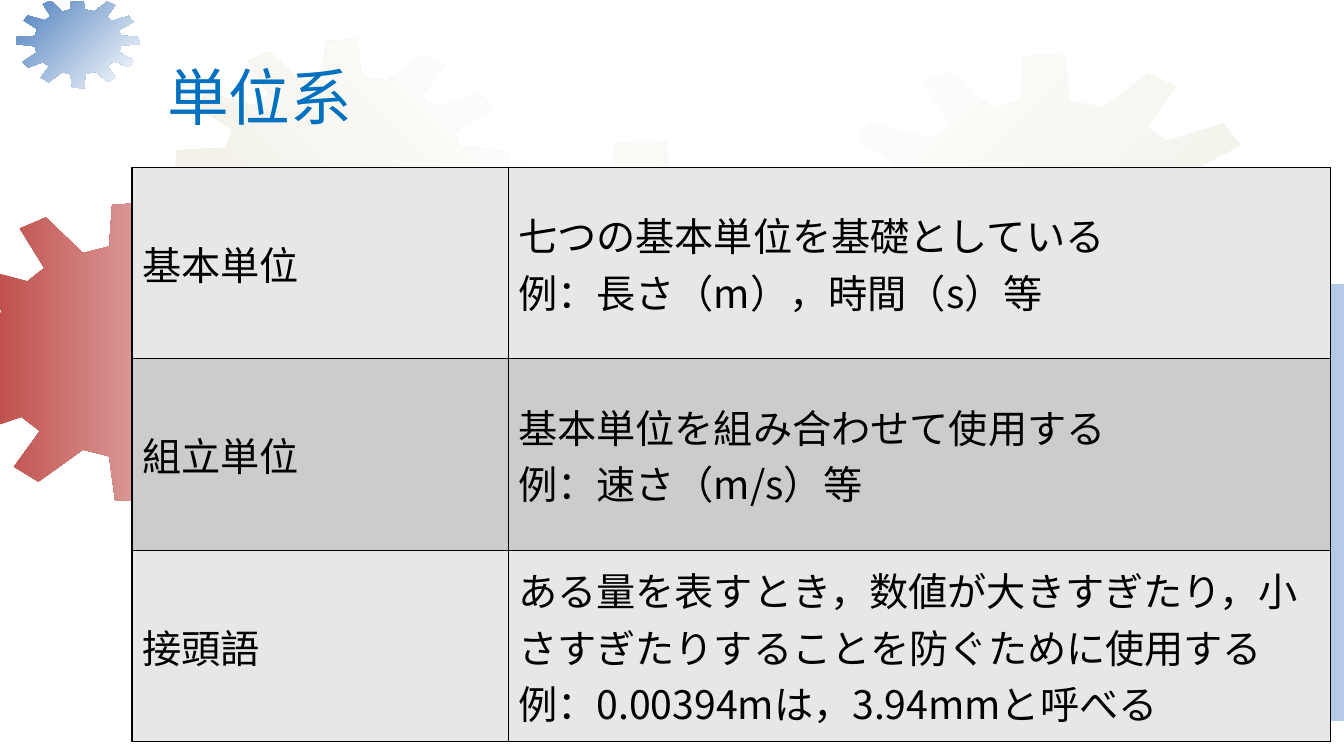
from copy import deepcopy

from lxml.etree import SubElement
from pptx import Presentation
from pptx.dml.color import RGBColor
from pptx.enum.text import MSO_ANCHOR
from pptx.oxml.ns import qn
from pptx.util import Inches, Pt

COLORS = {
    "title": "0070C0", "text": "000000", "border": "000000",
    "light_row": "E7E7E7", "dark_row": "CCCCCC", "white": "FFFFFF",
    "red": "C0504D", "blue": "4F81BD", "ivory": "EEECE1",
    "steel": "99ACC3", "sky": "B5CCE8",
}
JAPANESE_FONT = "Noto Sans CJK JP"

# One gear outline; every gear is this one scaled and moved
GEAR_WIDTH = 5.35
GEAR = [
    (3.40, 0.67), (2.98, 0.59), (2.92, 0), (2.40, 0.03), (2.36, 0.59), (2.01, 0.68),
    (1.51, 0.20), (1.16, 0.35), (1.49, 0.88), (1.26, 1.06), (0.50, 0.85), (0.33, 1.07),
    (0.91, 1.45), (0.81, 1.74), (0.02, 1.78), (0, 2.10), (0.81, 2.19), (0.89, 2.46),
    (0.29, 2.87), (0.50, 3.12), (1.18, 2.88), (1.43, 3.07), (1.08, 3.55), (1.41, 3.75),
    (2.01, 3.32), (2.36, 3.41), (2.44, 4.00), (2.96, 4.01), (3.02, 3.39), (3.46, 3.30),
    (3.98, 3.74), (4.33, 3.58), (3.98, 3.06), (4.22, 2.84), (4.91, 3.09), (5.12, 2.81),
    (4.49, 2.46), (4.56, 2.16), (5.35, 2.10), (5.34, 1.80), (4.54, 1.71), (4.47, 1.48),
    (5.10, 1.14), (4.89, 0.87), (4.18, 1.09), (3.94, 0.91), (4.31, 0.41), (3.96, 0.25),
]
# Slide edges that cut the gears: axis, limit, side that is kept
EDGES = [(0, -0.02, 1), (0, 13.35, -1), (1, 0.02, 1), (1, 7.54, -1)]


def cut(points, axis, limit, side):
    """Keep the part of a polygon on one side of an edge."""
    kept = []
    for start, end in zip(points[-1:] + points[:-1], points):
        before = (start[axis] - limit) * side
        after = (end[axis] - limit) * side
        if before * after < 0:
            share = before / (before - after)
            kept.append(tuple(a + (b - a) * share for a, b in zip(start, end)))
        if after >= 0:
            kept.append(end)
    return kept


def add_text(paragraph, text, size, latin_font, color):
    run = paragraph.add_run()
    run.text = text
    run.font.size = Pt(size)
    run.font.name = latin_font
    run.font.color.rgb = RGBColor.from_string(COLORS[color])
    SubElement(run.font._element, qn("a:ea"), typeface=JAPANESE_FONT)


prs = Presentation()
prs.slide_width = Inches(13.33)
prs.slide_height = Inches(7.5)
slide = prs.slides.add_slide(prs.slide_layouts[6])

# Gears: left, top, width, clockwise gradient angle, colours
gears = [
    (-0.66, 2.01, 3.95, 0, ["red", "white"]),
    (0.16, -0.04, 1.22, 45, ["blue", "white"]),
    (1.74, 0.39, 3.31, 315, ["ivory", "white"]),
    (3.69, 1.39, 5.35, 45, ["white", "ivory"]),
    (0, 5.25, 4.99, 0, ["white"]),
    (6.55, 4.84, 3.3, 45, ["ivory", "white"]),
    (8.23, 0.53, 4.27, 45, ["white", "ivory"]),
    (10.42, 2.8, 5.82, 0, ["white", "steel", "sky"]),
]
for left, top, width, angle, colors in gears:
    scale = width / GEAR_WIDTH
    outline = [(left + x * scale, top + y * scale) for x, y in GEAR]
    for edge in EDGES:
        outline = cut(outline, *edge)
    corners = [(Inches(x), Inches(y)) for x, y in outline]
    builder = slide.shapes.build_freeform(*corners[0])
    builder.add_line_segments(corners[1:], close=True)
    gear = builder.convert_to_shape()
    gear.shadow.inherit = False
    gear.line.fill.background()
    properties = gear._element.spPr

    if len(colors) == 1:
        gear.fill.solid()
        gear.fill.fore_color.rgb = RGBColor.from_string(COLORS[colors[0]])
        solid_color = properties.find(".//" + qn("a:srgbClr"))
        SubElement(solid_color, qn("a:alpha"), val="50000")
        continue

    gear.fill.gradient()
    gear.fill.gradient_angle = (360 - angle) % 360
    stop_list = properties.find(".//" + qn("a:gsLst"))
    for _ in colors[2:]:
        stop_list.append(deepcopy(stop_list[-1]))
    for index, (stop, color) in enumerate(zip(gear.fill.gradient_stops, colors)):
        stop.position = index / (len(colors) - 1)
        stop.color.rgb = RGBColor.from_string(COLORS[color])

# Title
title = slide.shapes.add_textbox(Inches(1.56), Inches(0.33), Inches(11.33), Inches(1.25))
title.text_frame.word_wrap = True
title.text_frame.vertical_anchor = MSO_ANCHOR.MIDDLE
add_text(title.text_frame.paragraphs[0], "単位系", 44, "Arial", "title")

# Table of units
units = [
    ("基本単位", ["七つの基本単位を基礎としている",
              "例：長さ（m），時間（s）等"]),
    ("組立単位", ["基本単位を組み合わせて使用する",
              "例：速さ（m/s）等"]),
    ("接頭語", ["ある量を表すとき，数値が大きすぎたり，小さすぎたりすることを防ぐために使用する",
             "例：0.00394mは，3.94mmと呼べる"]),
]
table = slide.shapes.add_table(
    len(units), 2, Inches(1.31), Inches(1.66), Inches(11.89), Inches(5.7)).table
table.first_row = False
table.horz_banding = False
table.columns[0].width = Inches(3.73)
table.columns[1].width = Inches(8.16)

for row, (unit, explanation) in enumerate(units):
    table.rows[row].height = Inches(1.9)
    for column, lines in enumerate([[unit], explanation]):
        cell = table.cell(row, column)
        cell.vertical_anchor = MSO_ANCHOR.MIDDLE
        cell_properties = cell._tc.get_or_add_tcPr()
        for side in ("lnL", "lnR", "lnT", "lnB"):
            border = SubElement(cell_properties, qn("a:" + side), w=str(Pt(1)))
            border_fill = SubElement(border, qn("a:solidFill"))
            SubElement(border_fill, qn("a:srgbClr"), val=COLORS["border"])
        cell.fill.solid()
        row_color = "dark_row" if row % 2 else "light_row"
        cell.fill.fore_color.rgb = RGBColor.from_string(COLORS[row_color])
        for number, line in enumerate(lines):
            frame = cell.text_frame
            paragraph = frame.add_paragraph() if number else frame.paragraphs[0]
            add_text(paragraph, line, 28, JAPANESE_FONT, "text")

prs.save("out.pptx")
